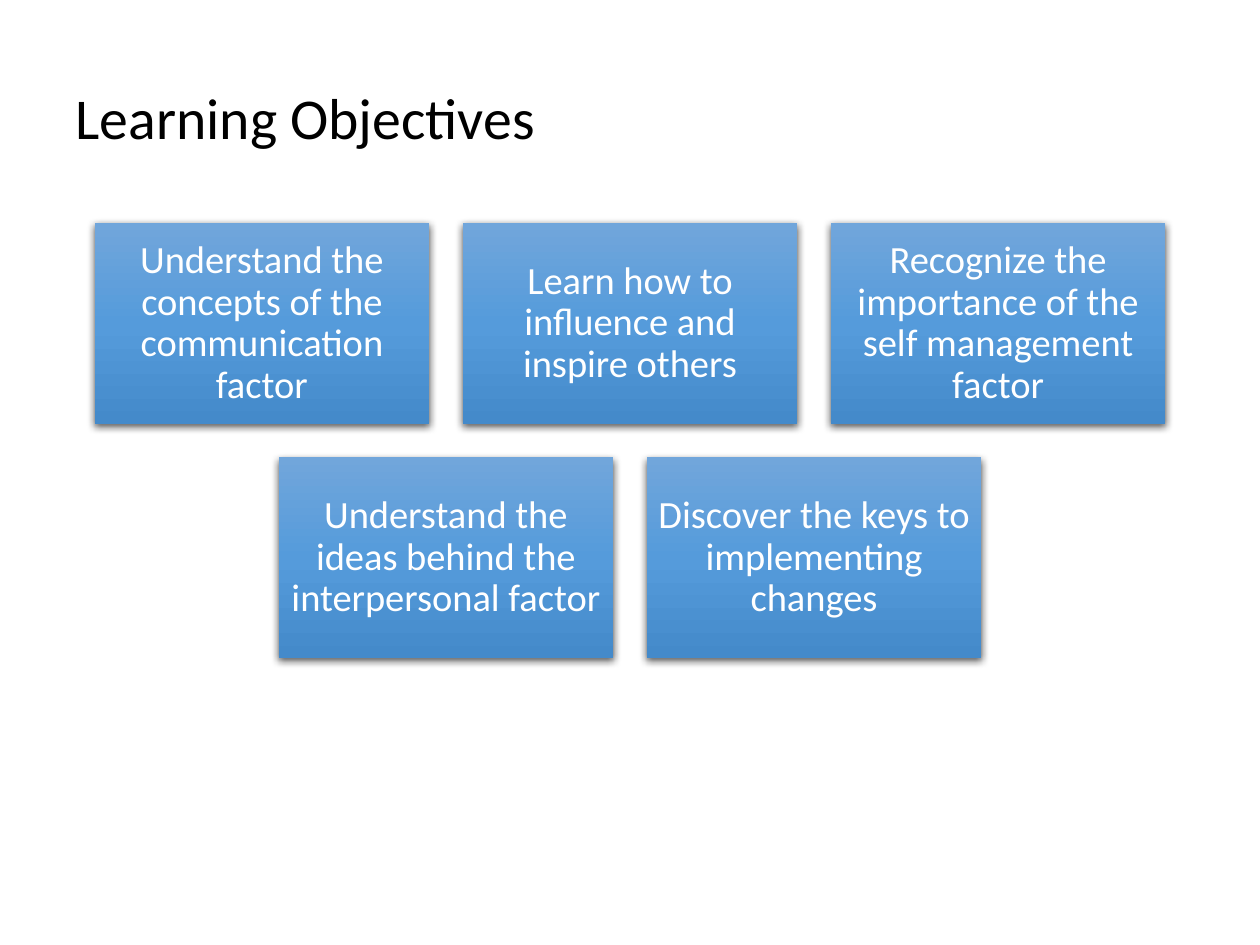
import copy
import pptx
import pptx.util
import pptx.dml.color
import pptx.enum.shapes
import pptx.enum.text
import pptx.oxml.ns
import lxml.etree

Pt = pptx.util.Pt
qn = pptx.oxml.ns.qn
text_enum = pptx.enum.text

# Content
TITLE = "Learning Objectives"
ROWS = [
    ["Understand the concepts of the communication factor",
     "Learn how to influence and inspire others",
     "Recognize the importance of the self management factor"],
    ["Understand the ideas behind the interpersonal factor",
     "Discover the keys to implementing changes"],
]

# Style and grid, in points
COLORS = {"title": "000000", "text": "FFFFFF", "shadow": "000000",
          "top": "71A6DB", "mid": "559BDB", "base": "448ACA"}
FONT = "Calibri"
WIDE, HIGH = 720, 540
BOX_W, BOX_H, GAP = 191.25, 114.75, 19.1
GRID_TOP = 127.5


def rgb(name):
    return pptx.dml.color.RGBColor.from_string(COLORS[name])


def write(frame, text, size, color, align):
    frame.word_wrap = True
    frame.vertical_anchor = text_enum.MSO_ANCHOR.MIDDLE
    para = frame.paragraphs[0]
    para.alignment = align
    para.line_spacing = 0.9
    run = para.add_run()
    run.text = text
    run.font.name = FONT
    run.font.size = Pt(size)
    run.font.color.rgb = rgb(color)


def shade(box):
    """Give a box its three-stop gradient and soft shadow."""
    box.fill.gradient()
    box.fill.gradient_angle = 270
    props = box._element.spPr
    stops = props.find(".//" + qn("a:gsLst"))
    stops.append(copy.deepcopy(stops[0]))
    for stop, name, place in zip(box.fill.gradient_stops,
                                 ("top", "mid", "base"), (0, 0.5, 1)):
        stop.color.rgb = rgb(name)
        stop.position = place
    box.line.fill.background()
    box.shadow.inherit = False
    cast = lxml.etree.SubElement(
        props.find(qn("a:effectLst")), qn("a:outerShdw"),
        blurRad=str(Pt(4.5)), dist=str(Pt(1.5)), dir="5400000",
        algn="ctr", rotWithShape="0")
    tint = lxml.etree.SubElement(cast, qn("a:srgbClr"), val=COLORS["shadow"])
    lxml.etree.SubElement(tint, qn("a:alpha"), val="63000")


def add_box(slide, text, left, top):
    box = slide.shapes.add_shape(pptx.enum.shapes.MSO_SHAPE.RECTANGLE,
                                 Pt(left), Pt(top), Pt(BOX_W), Pt(BOX_H))
    shade(box)
    frame = box.text_frame
    frame.margin_left = frame.margin_right = Pt(6.6)
    frame.margin_top = frame.margin_bottom = Pt(6.6)
    write(frame, text, 22, "text", text_enum.PP_ALIGN.CENTER)


def main():
    deck = pptx.Presentation()
    deck.slide_width, deck.slide_height = Pt(WIDE), Pt(HIGH)
    slide = deck.slides.add_slide(deck.slide_layouts[5])

    # Title
    title = slide.shapes.title
    title.left, title.top = Pt(36), Pt(30)
    title.width, title.height = Pt(648), Pt(78)
    write(title.text_frame, TITLE, 33, "title", text_enum.PP_ALIGN.LEFT)

    # Objective boxes, each row centred on the slide
    for row, texts in enumerate(ROWS):
        span = len(texts) * (BOX_W + GAP) - GAP
        for col, text in enumerate(texts):
            add_box(slide, text, (WIDE - span) / 2 + col * (BOX_W + GAP),
                    GRID_TOP + row * (BOX_H + GAP))

    deck.save("out.pptx")


if __name__ == "__main__":
    main()
